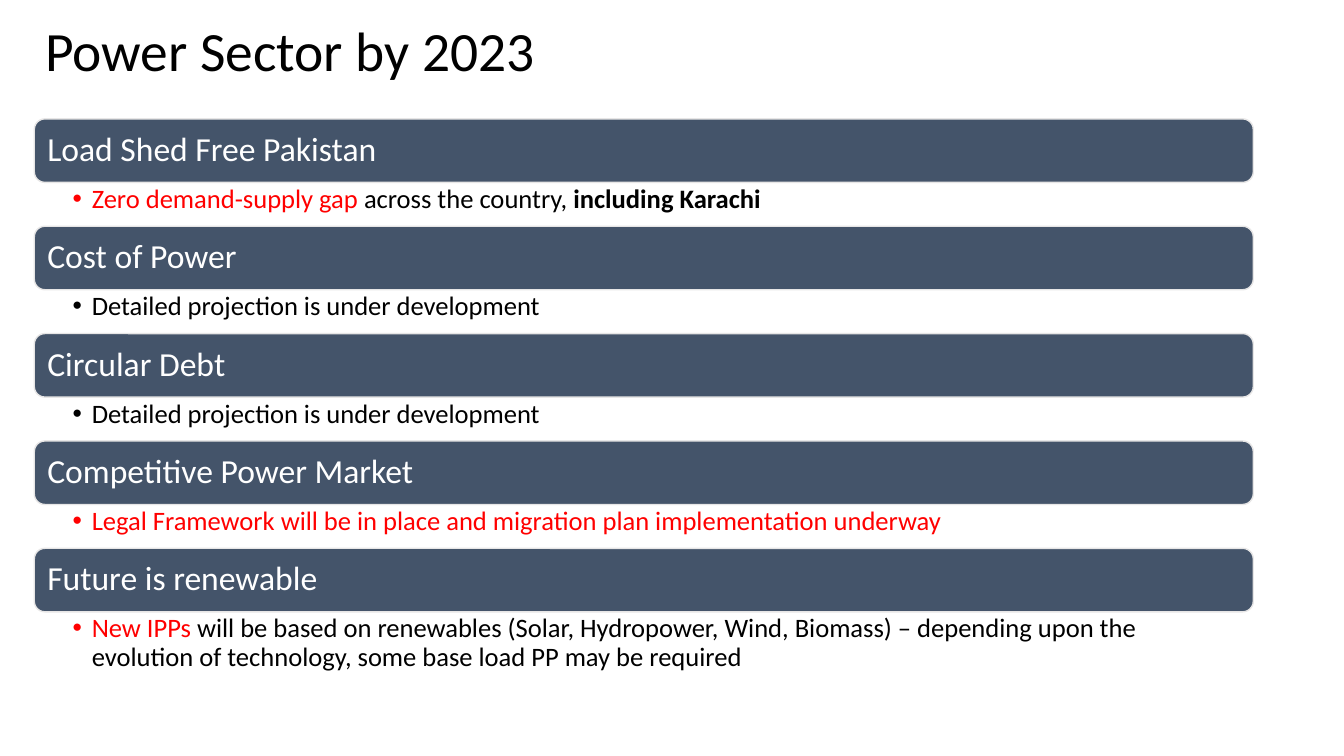
from dataclasses import dataclass

from lxml.etree import SubElement
from pptx import Presentation
from pptx.dml.color import RGBColor as RGB
from pptx.enum.shapes import MSO_SHAPE as Shape
from pptx.enum.text import MSO_ANCHOR as Anchor, PP_ALIGN as Align
from pptx.oxml.ns import qn
from pptx.slide import Slide
from pptx.text.text import Font, TextFrame
from pptx.util import Inches, Pt

COLORS = {"bar": "44546A", "edge": "E7E6E6", "white": "FFFFFF",
          "black": "000000", "red": "FF0000"}
LEFT, TOP, WIDTH = 0.34, 1.18, 12.09
BAR, PITCH = 0.63, 1.065


@dataclass
class Run:
    text: str
    color: str = "black"
    bold: bool = False


@dataclass
class Topic:
    head: str
    runs: list[Run]
    height: float = 0.43


TOPICS = [
    Topic("Load Shed Free Pakistan",
          [Run("Zero demand-supply gap ", "red"), Run("across the country, "),
           Run("including Karachi", bold=True)]),
    Topic("Cost of Power", [Run("Detailed projection is under development")]),
    Topic("Circular Debt", [Run("Detailed projection is under development")]),
    Topic("Competitive Power Market",
          [Run("Legal Framework will be in place and migration plan "
               "implementation underway", "red")]),
    Topic("Future is renewable",
          [Run("New IPPs ", "red"),
           Run("will be based on renewables (Solar, Hydropower, Wind, Biomass) "
               "– depending upon the evolution of technology, some base load PP "
               "may be required")], 0.65),
]


def color(name: str) -> RGB:
    return RGB.from_string(COLORS[name])


def style(font: Font, size: float, tint: str) -> None:
    font.name, font.size = "Calibri", Pt(size)
    font.color.rgb = color(tint)


def inset(frame: TextFrame, left: float, top: float, right: float) -> None:
    """Wrap the text and set its margins, with the bottom equal to the top."""
    frame.word_wrap = True
    frame.margin_left, frame.margin_right = Inches(left), Inches(right)
    frame.margin_top = frame.margin_bottom = Inches(top)


def write(frame: TextFrame, text: str, size: float, tint: str) -> None:
    """Fill a frame with one left-aligned line, centred in height."""
    frame.vertical_anchor = Anchor.MIDDLE
    line = frame.paragraphs[0]
    line.text, line.alignment, line.line_spacing = text, Align.LEFT, 0.9
    style(line.font, size, tint)


def add_title(slide: Slide, text: str) -> None:
    box = slide.shapes.add_textbox(Inches(0.35), Inches(0.19),
                                   Inches(12.56), Inches(0.68))
    inset(box.text_frame, 0.1, 0.05, 0.1)
    write(box.text_frame, text, 39.6, "black")


def add_bar(slide: Slide, text: str, top: float) -> None:
    bar = slide.shapes.add_shape(Shape.ROUNDED_RECTANGLE, Inches(LEFT),
                                 Inches(top), Inches(WIDTH), Inches(BAR))
    bar.shadow.inherit = False
    bar.fill.solid()
    bar.fill.fore_color.rgb = color("bar")
    bar.line.color.rgb = color("edge")
    bar.line.width = Pt(1)
    inset(bar.text_frame, 0.1, 0.1, 0.1)
    write(bar.text_frame, text, 24, "white")


def add_point(slide: Slide, topic: Topic, top: float) -> None:
    """Add the bulleted text below a bar."""
    box = slide.shapes.add_textbox(Inches(LEFT), Inches(top),
                                   Inches(WIDTH), Inches(topic.height))
    inset(box.text_frame, 0.38, 0.03, 0.19)
    line = box.text_frame.paragraphs[0]
    line.line_spacing = 0.9
    props = line._p.get_or_add_pPr()
    props.set("marL", str(Inches(0.19)))
    props.set("indent", str(-Inches(0.19)))
    tint = SubElement(props, qn("a:buClr"))
    SubElement(tint, qn("a:srgbClr"), val=COLORS[topic.runs[0].color])
    SubElement(props, qn("a:buFont"), typeface="Arial")
    SubElement(props, qn("a:buChar"), char="•")
    style(line.font, 19, "black")
    for part in topic.runs:
        run = line.add_run()
        run.text = part.text
        run.font.color.rgb = color(part.color)
        if part.bold:
            run.font.bold = True


def main() -> None:
    deck = Presentation()
    deck.slide_width, deck.slide_height = Inches(13.33), Inches(7.5)
    slide = deck.slides.add_slide(deck.slide_layouts[6])
    add_title(slide, "Power Sector by 2023")
    for row, topic in enumerate(TOPICS):
        top = TOP + row * PITCH
        add_bar(slide, topic.head, top)
        add_point(slide, topic, top + BAR)
    deck.save("out.pptx")


if __name__ == "__main__":
    main()
